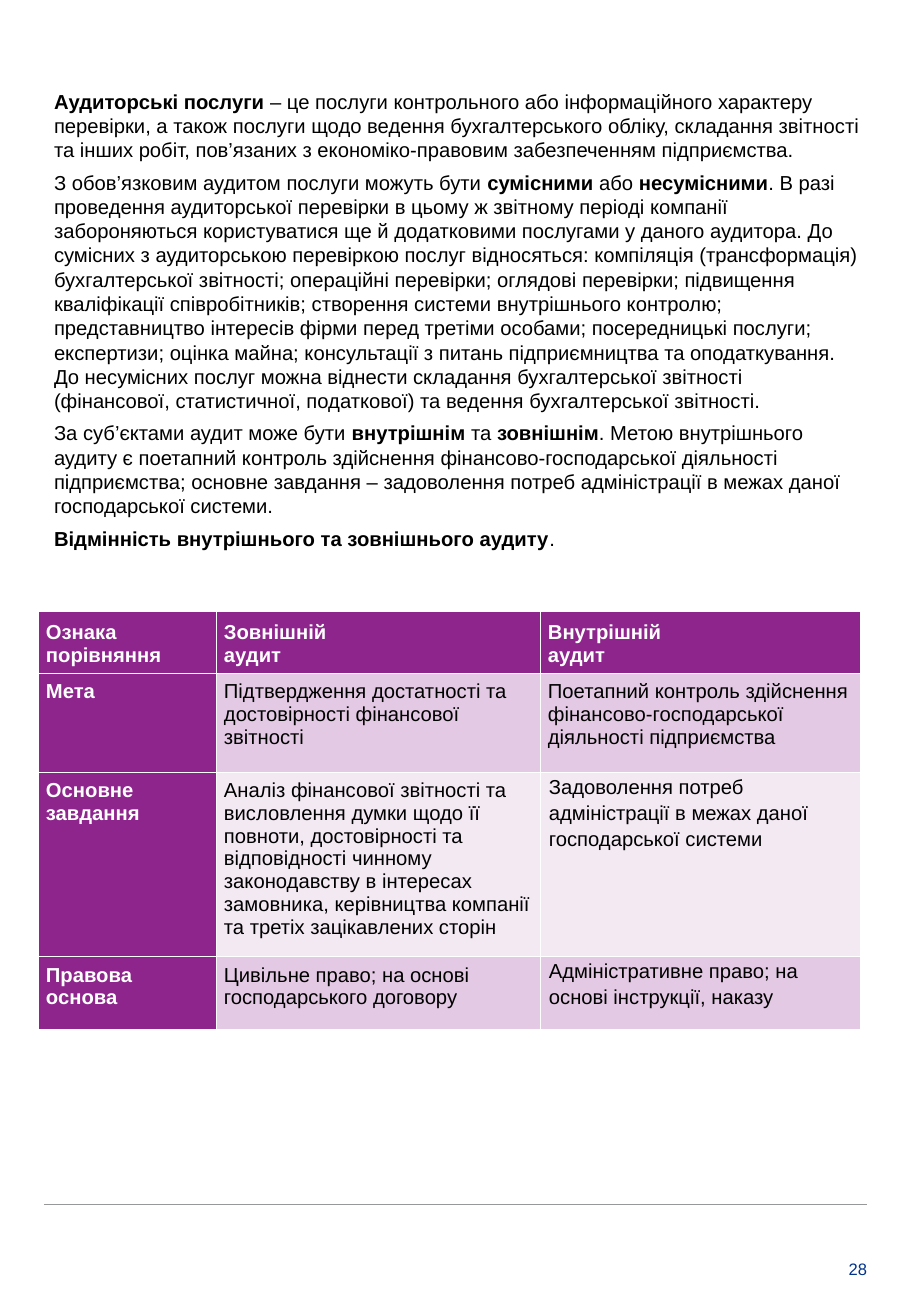
from lxml import etree
from pptx import Presentation
from pptx.dml.color import RGBColor
from pptx.enum.shapes import MSO_CONNECTOR
from pptx.enum.text import MSO_ANCHOR, PP_ALIGN
from pptx.oxml.ns import qn
from pptx.util import Pt

PX = 7526
STRAIGHT = MSO_CONNECTOR.STRAIGHT
TOP, BOTTOM = MSO_ANCHOR.TOP, MSO_ANCHOR.BOTTOM
LEFT, RIGHT = PP_ALIGN.LEFT, PP_ALIGN.RIGHT

THEME = {
    "font": "Arial", "text": Pt(12), "small": Pt(9.8),
    "ink": "000000", "white": "FFFFFF", "navy": "00338D", "rule": "97989A",
    "head": "8E258D", "bands": ["E3C9E3", "F3E9F3"],
}
PLAIN = {"alignment": LEFT}
LOOSE = {"line_spacing": 1.15, "alignment": LEFT, "space_after": Pt(10)}
PAGE = {"alignment": RIGHT}

INTRO = [
    "*Аудиторські послуги *– це послуги контрольного або інформаційного характеру перевірки, "
    "а також послуги щодо ведення бухгалтерського обліку, складання звітності та інших робіт, "
    "пов’язаних з економіко-правовим забезпеченням підприємства.",
    "З обов’язковим аудитом послуги можуть бути* сумісними *або *несумісними*. "
    "В разі проведення аудиторської перевірки в цьому ж звітному періоді компанії "
    "забороняються користуватися ще й додатковими послугами у даного аудитора. "
    "До сумісних з аудиторською перевіркою послуг відносяться: компіляція (трансформація) "
    "бухгалтерської звітності; операційні перевірки; оглядові перевірки; підвищення "
    "кваліфікації співробітників; створення системи внутрішнього контролю; представництво "
    "інтересів фірми перед третіми особами; посередницькі послуги; експертизи; оцінка майна; "
    "консультації з питань підприємництва та оподаткування. До несумісних послуг можна "
    "віднести складання бухгалтерської звітності (фінансової, статистичної, податкової) "
    "та ведення бухгалтерської звітності.",
    "За суб’єктами аудит може бути *внутрішнім* та *зовнішнім*. Метою внутрішнього аудиту "
    "є поетапний контроль здійснення фінансово-господарської діяльності підприємства; "
    "основне завдання – задоволення потреб адміністрації в межах даної господарської системи.",
    "*Відмінність внутрішнього та зовнішнього аудиту*.",
]
ROWS = [
    [["*Ознака порівняння*"], ["*Зовнішній*", "*аудит*"], ["*Внутрішній*", "*аудит*"]],
    [["*Мета*"],
     ["Підтвердження достатності та достовірності фінансової звітності"],
     ["Поетапний контроль здійснення фінансово-господарської діяльності підприємства"]],
    [["*Основне завдання*"],
     ["Аналіз фінансової звітності та висловлення думки щодо її повноти, достовірності та "
      "відповідності чинному законодавству в інтересах замовника, керівництва компанії "
      "та третіх зацікавлених сторін"],
     ["Задоволення потреб адміністрації в межах даної господарської системи"]],
    [["*Правова основа*"],
     ["Цивільне право; на основі господарського договору"],
     ["Адміністративне право; на основі інструкції, наказу"]],
]
WIDTHS = [178, 324, 320]
HEIGHTS = [60, 99, 174, 73]


def apply(item, values):
    for name, value in values.items():
        setattr(item, name, value)


def inset(item, sides):
    names = ["margin_left", "margin_top", "margin_right", "margin_bottom"]
    apply(item, {name: side * PX for name, side in zip(names, sides)})


def write(frame, lines, style, color, size="text", gap=0):
    for i, line in enumerate(lines):
        para = frame.add_paragraph() if i else frame.paragraphs[0]
        apply(para, style)
        if i and gap:
            para.space_before = Pt(gap)
        for j, part in enumerate(line.split("*")):
            if part:
                run = para.add_run()
                run.text = part
                apply(run.font, {"name": THEME["font"], "size": THEME[size], "bold": j % 2 == 1})
                run.font.color.rgb = RGBColor.from_string(THEME[color])


def add_text(slide, box, sides, lines, style, color, size="text", gap=0):
    frame = slide.shapes.add_textbox(*(n * PX for n in box)).text_frame
    frame.word_wrap = True
    inset(frame, sides)
    write(frame, lines, style, color, size, gap)


def add_edges(cell):
    props = cell._tc.get_or_add_tcPr()
    for side in ["lnL", "lnR", "lnT", "lnB"]:
        edge = etree.SubElement(props, qn("a:" + side), w=str(Pt(0.5)))
        fill = etree.SubElement(edge, qn("a:solidFill"))
        etree.SubElement(fill, qn("a:srgbClr"), val=THEME["white"])


def add_grid(slide, box):
    shape = slide.shapes.add_table(len(ROWS), len(WIDTHS), *(n * PX for n in box))
    table = shape.table
    apply(table, {"first_row": False, "horz_banding": False})
    for col, width in zip(table.columns, WIDTHS):
        col.width = width * PX
    for r, (row, height) in enumerate(zip(ROWS, HEIGHTS)):
        table.rows[r].height = height * PX
        for c, lines in enumerate(row):
            cell = table.cell(r, c)
            head = r == 0 or c == 0
            loose = r > 1 and c == 2
            add_edges(cell)
            cell.fill.solid()
            shade = THEME["head"] if head else THEME["bands"][(r - 1) % 2]
            cell.fill.fore_color.rgb = RGBColor.from_string(shade)
            cell.vertical_anchor = TOP if r else BOTTOM
            inset(cell, [9, 0, 9, 0] if loose else [8, 7, 8, 7])
            write(cell.text_frame, lines, LOOSE if loose else PLAIN, "white" if head else "ink")


def add_foot(slide, box):
    x, y, w, h = box
    rule = slide.shapes.add_connector(STRAIGHT, x * PX, y * PX, (x + w) * PX, y * PX)
    rule.line.width = Pt(0.25)
    rule.line.color.rgb = RGBColor.from_string(THEME["rule"])
    etree.SubElement(rule._element.spPr, qn("a:effectLst"))
    add_text(slide, [x + w - 67, y + h - 32, 67, 32], [11, 11, 0, 0], ["28"], PAGE, "navy", "small")


def main():
    deck = Presentation()
    apply(deck, {"slide_width": 911 * PX, "slide_height": 1316 * PX})
    slide = deck.slides.add_slide(deck.slide_layouts[6])
    add_foot(slide, [44, 1204, 823, 76])
    add_text(slide, [54, 89, 807, 623], [0] * 4, INTRO, PLAIN, "ink", gap=4.7)
    add_grid(slide, [38, 611, sum(WIDTHS), sum(HEIGHTS)])
    deck.save("out.pptx")


if __name__ == "__main__":
    main()
